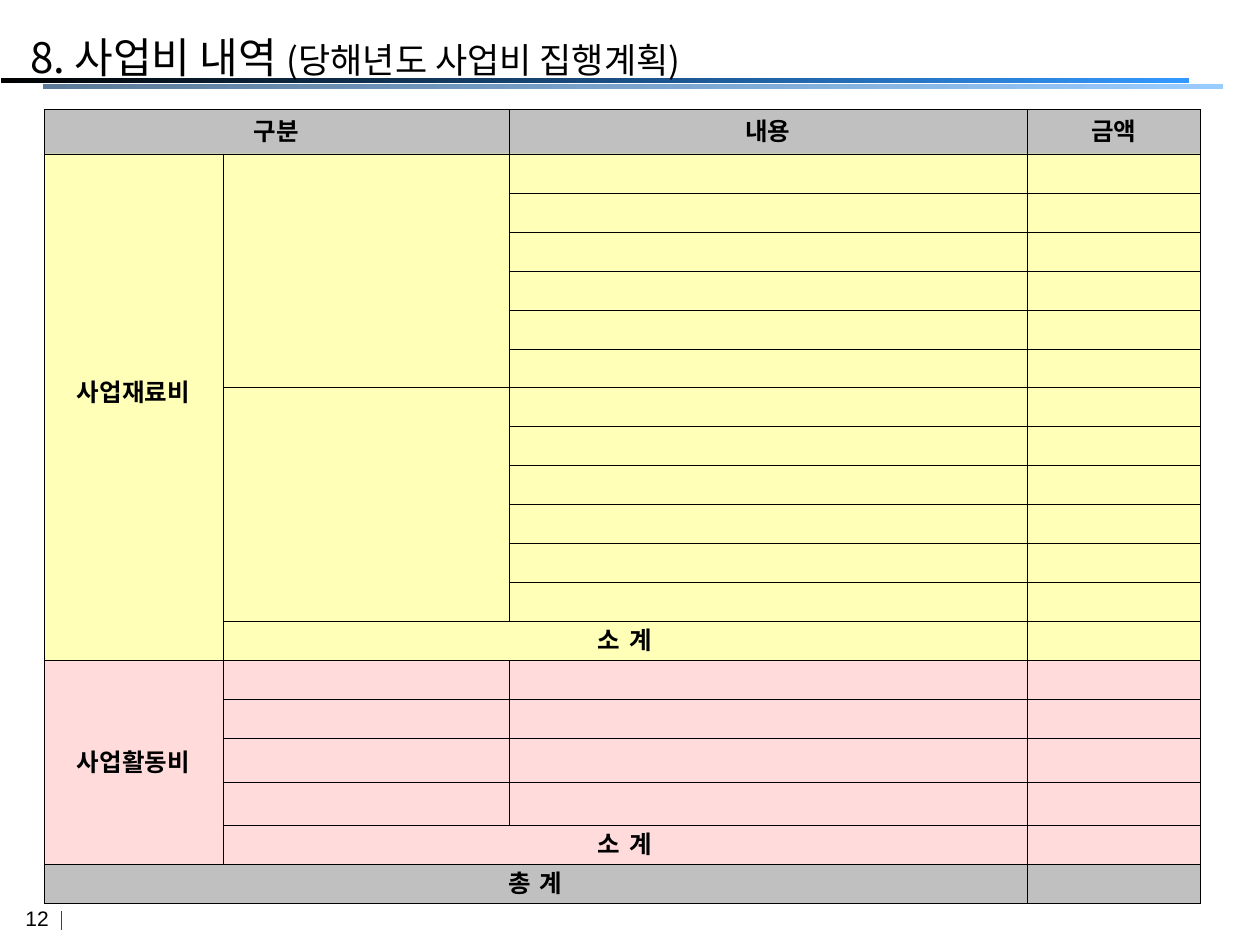
import pptx
import pptx.dml.color
import pptx.enum.shapes
import pptx.enum.text
import pptx.oxml
import pptx.oxml.ns
import pptx.util
from lxml import etree

FONT_TITLE = "Noto Sans CJK KR"
FONT_TABLE = "DejaVu Sans"
BLACK, GREY, YELLOW, PINK = "000000", "C0C0C0", "FFFF99", "FFCCCC"
qn = pptx.oxml.ns.qn
Pt, Inches = pptx.util.Pt, pptx.util.Inches

deck = pptx.Presentation()
deck.slide_width, deck.slide_height = Inches(10), Inches(7.5)
column, row = deck.slide_width / 100, deck.slide_height / 100
page = deck.slides.add_slide(deck.slide_layouts[6])


def colour(value):
    return pptx.dml.color.RGBColor.from_string(value)


def write(para, text, size, font, bold=False):
    """Add one run, with the same face for Latin and Korean letters."""
    span = para.add_run()
    span.text = text
    span.font.size, span.font.name, span.font.bold = Pt(size), font, bold
    span.font.color.rgb = colour(BLACK)
    etree.SubElement(span.font._element, qn("a:ea"), typeface=font)


# Page number and its divider
box = page.shapes.add_textbox(int(-0.5 * column), int(95.2 * row),
                              int(6.9 * column), int(4.67 * row))
box.text_frame.word_wrap = False
para = box.text_frame.paragraphs[0]
para.alignment = pptx.enum.text.PP_ALIGN.CENTER
write(para, "12", 12, "Arial")

divider = page.shapes.add_connector(
    pptx.enum.shapes.MSO_CONNECTOR.STRAIGHT,
    int(4.9 * column), int(96.4 * row), int(4.9 * column), int(98.4 * row))
divider.line.color.rgb = colour("404040")
divider.line.width = Pt(0.75)
etree.SubElement(divider._element.spPr, qn("a:effectLst"))

# Two gradient bars under the title
for left, top, width, start, end in [(0.1, 8.27, 94.3, BLACK, "3399FF"),
                                     (3.4, 8.93, 93.7, "5B7A99", "99CCFF")]:
    bar = page.shapes.add_shape(
        pptx.enum.shapes.MSO_SHAPE.RECTANGLE,
        int(left * column), int(top * row), int(width * column), int(0.53 * row))
    bar.shadow.inherit = False
    bar.line.fill.background()
    bar.fill.gradient()
    bar.fill.gradient_angle = 0
    for stop, value in zip(bar.fill.gradient_stops, (start, end)):
        stop.color.rgb = colour(value)

# Title
box = page.shapes.add_textbox(int(1.4 * column), 0, int(83.7 * column), int(8.53 * row))
box.text_frame.word_wrap = True
para = box.text_frame.paragraphs[0]
para.line_spacing = 1.5
write(para, "8. 사업비 내역 ", 24, FONT_TITLE)
write(para, "(당해년도 사업비 집행계획)", 20, FONT_TITLE)

# Budget table
widths = [14.2, 22.7, 41.1, 13.8]
heights = [4.67] + [4.13] * 15 + [4.6] * 2 + [4.13] * 2
fills = [GREY] + [YELLOW] * 13 + [PINK] * 5 + [GREY]
labels = {(0, 0): "구분", (0, 2): "내용", (0, 3): "금액",
          (1, 0): "사업재료비", (13, 1): "소 계",
          (14, 0): "사업활동비", (18, 1): "소 계", (19, 0): "총 계"}
merges = [((0, 0), (0, 1)), ((1, 0), (13, 0)), ((1, 1), (6, 1)),
          ((7, 1), (12, 1)), ((13, 1), (13, 2)), ((14, 0), (18, 0)),
          ((18, 1), (18, 2)), ((19, 0), (19, 2))]

table = page.shapes.add_table(
    len(heights), len(widths), int(3.5 * column), int(11.6 * row),
    int(sum(widths) * column), int(sum(heights) * row)).table
for table_column, width in zip(table.columns, widths):
    table_column.width = int(width * column)
for table_row, height in zip(table.rows, heights):
    table_row.height = int(height * row)
for first, last in merges:
    table.cell(*first).merge(table.cell(*last))

for r, fill in enumerate(fills):
    for c in range(len(widths)):
        cell = table.cell(r, c)
        cell.margin_left = cell.margin_right = Inches(0.02)
        cell.margin_top = cell.margin_bottom = Inches(0.02)
        cell.vertical_anchor = pptx.enum.text.MSO_ANCHOR.MIDDLE
        cell.fill.solid()
        cell.fill.fore_color.rgb = colour(fill)
        properties = cell._tc.get_or_add_tcPr()
        if fill != GREY:
            tint = properties.find(".//" + qn("a:srgbClr"))
            etree.SubElement(tint, qn("a:alpha"), val="70000")
        for position, side in enumerate(("lnL", "lnR", "lnT", "lnB")):
            properties.insert(position, pptx.oxml.parse_xml(
                f'<a:{side} xmlns:a="http://schemas.openxmlformats.org/drawingml/2006/main"'
                f' w="{Pt(0.25)}"><a:solidFill><a:srgbClr val="{BLACK}"/></a:solidFill></a:{side}>'))
        para = cell.text_frame.paragraphs[0]
        para.alignment = pptx.enum.text.PP_ALIGN.CENTER
        if (r, c) in labels:
            write(para, labels[r, c], 14, FONT_TABLE, bold=True)
        else:
            # A small font keeps empty cells from stretching their row
            etree.SubElement(para._p, qn("a:endParaRPr"), sz="1000")

# The first group label sits a little above the middle
table.cell(1, 0).margin_bottom = Inches(0.24)

deck.save("out.pptx")
